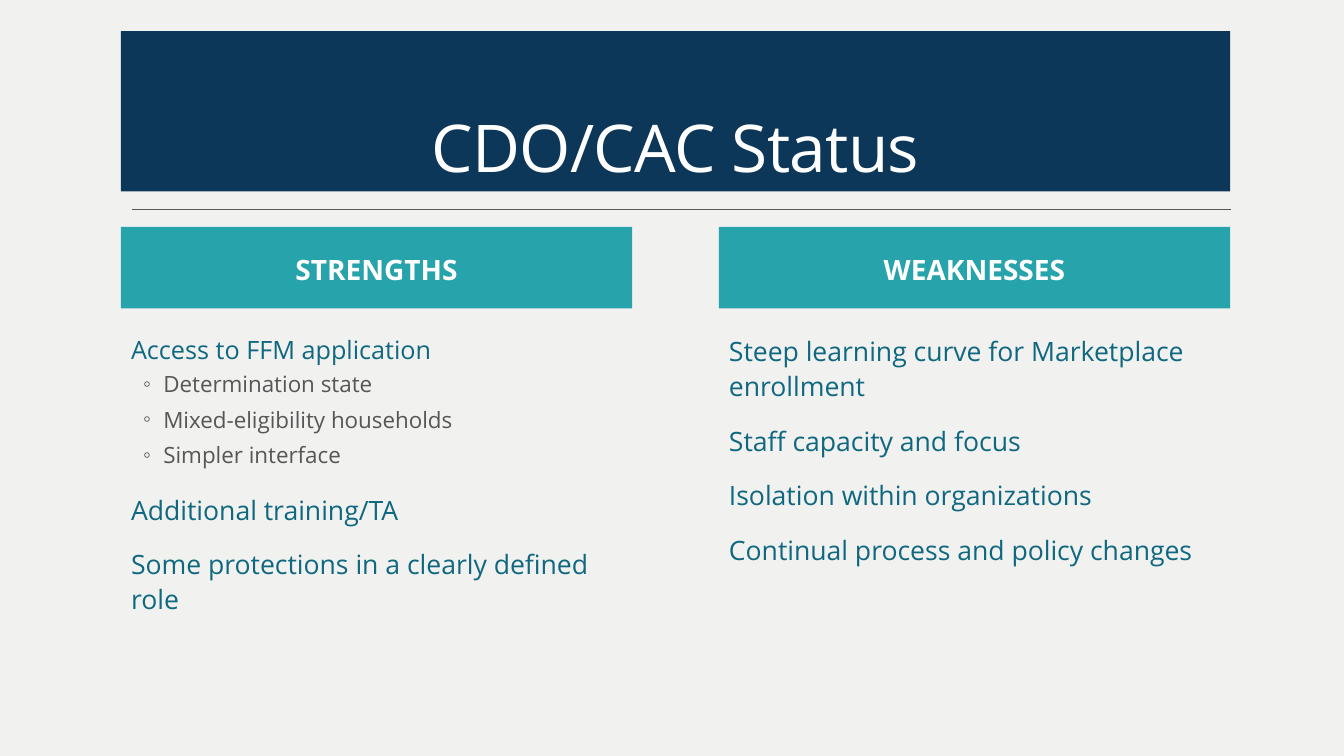
from collections import namedtuple
from dataclasses import dataclass

from lxml import etree
from pptx import Presentation
from pptx import util as u
from pptx.dml.color import RGBColor
from pptx.enum import shapes, text
from pptx.oxml import ns

Box = namedtuple("Box", "left top width height")


@dataclass(frozen=True)
class Theme:
    """Colours and type sizes of the slide."""
    font: str = "Open Sans"
    background: str = "F1F1F0"
    navy: str = "0D3759"
    teal: str = "26A3AB"
    white: str = "FFFFFF"
    point: str = "0F687F"
    grey: str = "565656"
    red: str = "ED1F24"
    title_size: int = 47
    heading_size: int = 20
    point_size: int = 19
    first_point_size: int = 18
    detail_size: int = 16


THEME = Theme()
HEADING_HEIGHT = 0.81
LIST_OFFSET = 0.99
STRENGTHS = [
    ("Access to FFM application", 0, THEME.first_point_size),
    ("Determination state", 1, THEME.detail_size),
    ("Mixed-eligibility households", 1, THEME.detail_size),
    ("Simpler interface", 1, THEME.detail_size),
    ("Additional training/TA", 0, THEME.point_size),
    ("Some protections in a clearly defined role", 0, THEME.point_size),
]
WEAKNESSES = [
    (wording, 0, THEME.point_size)
    for wording in (
        "Steep learning curve for Marketplace enrollment",
        "Staff capacity and focus",
        "Isolation within organizations",
        "Continual process and policy changes",
    )
]


def place(shape, box, anchor, fill=None):
    """Move a placeholder to its box and set its frame and fill."""
    shape.left, shape.top, shape.width, shape.height = map(u.Inches, box)
    frame = shape.text_frame
    frame.word_wrap = True
    frame.auto_size = text.MSO_AUTO_SIZE.NONE
    frame.vertical_anchor = anchor
    if fill:
        shape.fill.solid()
        shape.fill.fore_color.rgb = RGBColor.from_string(fill)


def format_runs(paragraph, size, color, bold=False):
    """Give every run of a paragraph its font, size and colour."""
    for run in paragraph.runs:
        run.font.name = THEME.font
        run.font.size = u.Pt(size)
        run.font.bold = bold
        run.font.color.rgb = RGBColor.from_string(color)


def space(paragraph, line, before, after):
    """Set line spacing and the gaps around a paragraph."""
    paragraph.line_spacing = line
    paragraph.space_before = u.Pt(before)
    paragraph.space_after = u.Pt(after)


def set_bullet(paragraph, character, color, indent, hanging):
    """Give a paragraph a coloured bullet with a hanging indent."""
    properties = paragraph._p.get_or_add_pPr()
    properties.set("marL", str(u.Inches(indent)))
    properties.set("indent", str(-u.Inches(hanging)))
    bullet_color = etree.SubElement(properties, ns.qn("a:buClr"))
    etree.SubElement(bullet_color, ns.qn("a:srgbClr"), val=color)
    etree.SubElement(properties, ns.qn("a:buChar"), char=character)


def add_title(slide, box):
    """Fill the title banner and draw the rule below it."""
    title = slide.shapes.title
    place(title, box, text.MSO_ANCHOR.BOTTOM, THEME.navy)
    title.text_frame.text = "CDO/CAC Status"
    paragraph = title.text_frame.paragraphs[0]
    paragraph.alignment = text.PP_ALIGN.CENTER
    space(paragraph, 0.9, 0, 0)
    format_runs(paragraph, THEME.title_size, THEME.white)
    paragraph.runs[0].font._element.set("spc", "-50")

    rule_top = u.Inches(box.top + box.height + 0.18)
    rule = slide.shapes.add_connector(
        shapes.MSO_CONNECTOR.STRAIGHT,
        u.Inches(box.left + 0.11), rule_top,
        u.Inches(box.left + box.width + 0.01), rule_top)
    rule.line.color.rgb = RGBColor.from_string(THEME.grey)
    rule.line.width = u.Pt(1)
    etree.SubElement(rule._element.spPr, ns.qn("a:effectLst"))


def add_heading(heading, box, wording):
    """Fill one column heading."""
    place(heading, box, text.MSO_ANCHOR.MIDDLE, THEME.teal)
    heading.text_frame.text = wording
    paragraph = heading.text_frame.paragraphs[0]
    paragraph.alignment = text.PP_ALIGN.CENTER
    space(paragraph, 1.1, 0, 2)
    format_runs(paragraph, THEME.heading_size, THEME.white, bold=True)


def add_points(body, box, points):
    """Fill one column list with points and their details."""
    place(body, box, text.MSO_ANCHOR.TOP)
    frame = body.text_frame
    frame.margin_left = frame.margin_right = 0
    frame.text = "\n".join(wording for wording, _, _ in points)
    for position, (paragraph, point) in enumerate(zip(frame.paragraphs, points)):
        _, level, size = point
        paragraph.level = level
        if level:
            set_bullet(paragraph, "◦", THEME.grey, 0.42, 0.2)
            space(paragraph, 1.0, 2, 4)
            format_runs(paragraph, size, THEME.grey)
        else:
            set_bullet(paragraph, " ", THEME.red, 0.1, 0.1)
            space(paragraph, 1.1, 12 if position else 0, 2)
            format_runs(paragraph, size, THEME.point)


def add_column(heading, body, box, wording, points):
    """Place a heading and its list in one column."""
    add_heading(heading, box._replace(height=HEADING_HEIGHT), wording)
    add_points(body, box._replace(top=box.top + LIST_OFFSET,
                                  height=box.height - LIST_OFFSET), points)


def add_comparison_slide(presentation, box):
    """Build the comparison slide inside the given box."""
    slide = presentation.slides.add_slide(presentation.slide_layouts[4])
    slide.background.fill.solid()
    slide.background.fill.fore_color.rgb = RGBColor.from_string(THEME.background)
    add_title(slide, box._replace(height=1.59))

    column = Box(box.left, box.top + 1.94, 5.07, box.height - 1.94)
    right_column = column._replace(left=box.left + box.width - column.width)
    parts = slide.placeholders
    add_column(parts[1], parts[2], column, "STRENGTHS", STRENGTHS)
    add_column(parts[3], parts[4], right_column, "WEAKNESSES", WEAKNESSES)


def main():
    """Create and save the presentation."""
    presentation = Presentation()
    presentation.slide_width = u.Inches(13.33)
    presentation.slide_height = u.Inches(7.5)
    add_comparison_slide(presentation, Box(1.2, 0.31, 11, 6.11))
    presentation.save("out.pptx")


if __name__ == "__main__":
    main()
